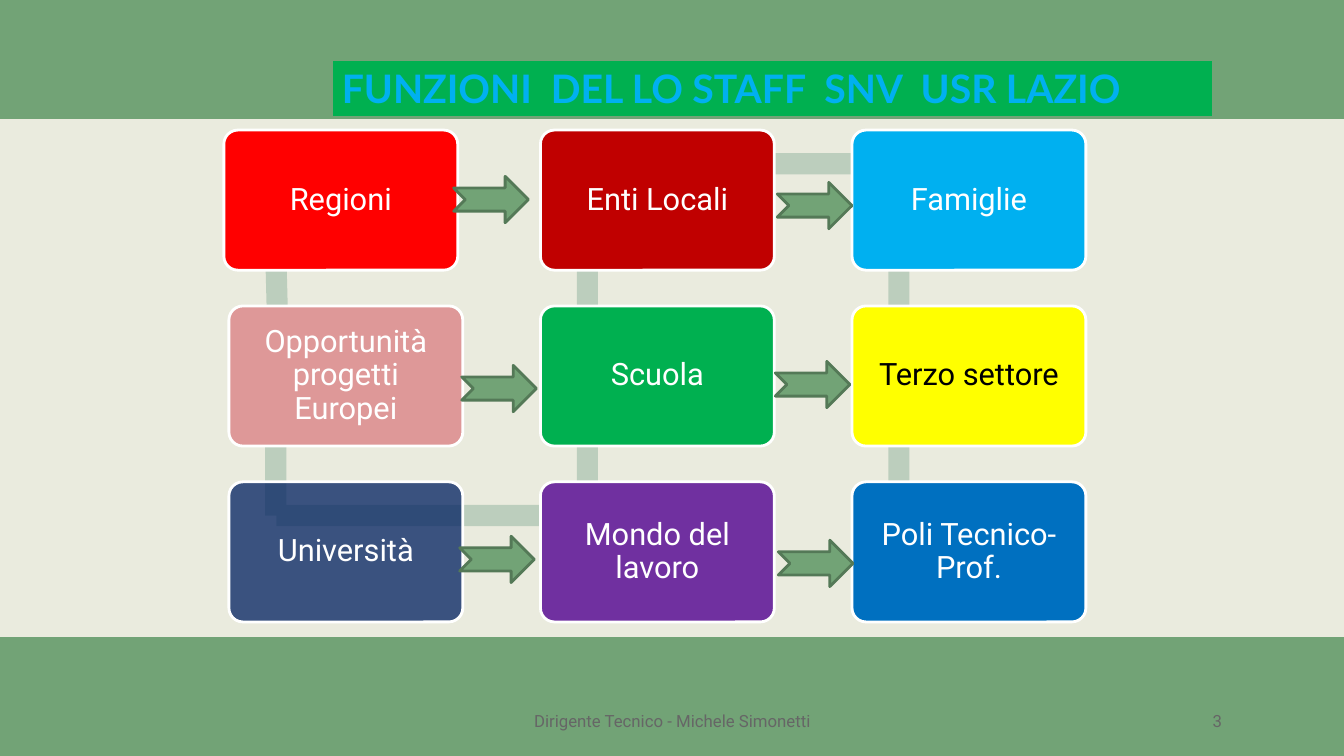
import pptx
import pptx.util
import pptx.dml.color
import pptx.enum.shapes
import pptx.enum.text
import pptx.oxml
import pptx.oxml.ns

Inches, Pt = pptx.util.Inches, pptx.util.Pt
SHAPE = pptx.enum.shapes.MSO_SHAPE
ALIGN = pptx.enum.text.PP_ALIGN
ANCHOR = pptx.enum.text.MSO_ANCHOR

GREEN = "72A376"
CARD_W, CARD_H = 2.32, 1.39
PITCH_X, PITCH_Y = 3.09, 1.745
CARDS = [
    [("Regioni", "FF0000"), ("Enti Locali", "C00000"), ("Famiglie", "00B0F0")],
    [("Opportunità progetti Europei", "DE9898"), ("Scuola", "00B050"), ("Terzo settore", "FFFF00")],
    [("Università", "002060"), ("Mondo del lavoro", "7030A0"), ("Poli Tecnico-Prof.", "0070C0")],
]
ARROWS = [
    [(2.23, 0.46), (2.35, 0.52)],
    [(2.31, 0.59), (2.33, 0.55)],
    [(2.29, 0.54), (2.36, 0.58)],
]


def rgb(color):
    return pptx.dml.color.RGBColor.from_string(color)


def add_shape(s, kind, x, y, w, h, fill, line=None):
    sp = s.shapes.add_shape(kind, Inches(x), Inches(y), Inches(w), Inches(h))
    sp.shadow.inherit = False
    sp.fill.solid()
    sp.fill.fore_color.rgb = rgb(fill)
    if line:
        sp.line.color.rgb = rgb(line)
        sp.line.width = Pt(2)
    else:
        sp.line.fill.background()
    return sp


def set_text(sp, text, size, color, align, margins, font="Roboto", bold=False):
    tf = sp.text_frame
    tf.word_wrap = True
    tf.vertical_anchor = ANCHOR.MIDDLE
    tf.margin_left = tf.margin_right = Inches(margins[0])
    tf.margin_top = tf.margin_bottom = Inches(margins[1])
    p = tf.paragraphs[0]
    p.text = text
    p.alignment = align
    p.font.name = font
    p.font.size = Pt(size)
    p.font.bold = bold
    p.font.color.rgb = rgb(color)
    return p


def set_alpha(sp, percent):
    color = sp.fill._xPr.find(".//" + pptx.oxml.ns.qn("a:srgbClr"))
    color.append(pptx.oxml.parse_xml(
        f'<a:alpha {pptx.oxml.ns.nsdecls("a")} val="{percent * 1000}"/>'))


def add_title(s, x, y, w, h):
    sp = s.shapes.title
    sp.left, sp.top, sp.width, sp.height = (Inches(v) for v in (x, y, w, h))
    sp.fill.solid()
    sp.fill.fore_color.rgb = rgb("00B050")
    sp.line.color.rgb = rgb(GREEN)
    sp.line.width = Pt(2)
    set_text(sp, "FUNZIONI  DEL LO STAFF  SNV  USR LAZIO", 28, "00B0F0",
             ALIGN.LEFT, (0.1, 0.05), "Lato", True)
    sp.text_frame.auto_size = pptx.enum.text.MSO_AUTO_SIZE.NONE
    sp.element.getparent().append(sp.element)


def add_links(s, x, y):
    for row in range(2):
        for col in range(3):
            sp = add_shape(s, SHAPE.RECTANGLE, x - 0.4 + col * PITCH_X,
                           y + 1.11 + row * PITCH_Y, 1.73, 0.21, "BCCEBD")
            sp.rotation = 88.5 if row == col == 0 else 90
    for row, col in ((2, 0), (0, 1)):
        add_shape(s, SHAPE.RECTANGLE, x + 0.47 + col * PITCH_X,
                  y + 0.23 + row * PITCH_Y, 3.08, 0.21, "BCCEBD")


def add_cards(s, x, y):
    for row, cards in enumerate(CARDS):
        for col, (text, fill) in enumerate(cards):
            nudge = -0.05 if row == col == 0 else 0
            sp = add_shape(s, SHAPE.ROUNDED_RECTANGLE, x + nudge + col * PITCH_X,
                           y + row * PITCH_Y, CARD_W, CARD_H, fill, "FFFFFF")
            sp.adjustments[0] = 0.1
            color = "000000" if fill == "FFFF00" else "FFFFFF"
            p = set_text(sp, text, 22, color, ALIGN.CENTER, (0.13, 0.13))
            p.line_spacing = 0.9
            if text == "Università":
                set_alpha(sp, 75)


def add_arrows(s, x, y):
    for row, offsets in enumerate(ARROWS):
        for col, (dx, dy) in enumerate(offsets):
            add_shape(s, SHAPE.NOTCHED_RIGHT_ARROW, x + dx + col * PITCH_X,
                      y + dy + row * PITCH_Y, 0.74, 0.46, GREEN, "547957")


def add_footer(s, x, y, h):
    for text, dx, w, align in (
        ("Dirigente Tecnico - Michele Simonetti", 0, 6.92, ALIGN.CENTER),
        ("3", 6.91, 2, ALIGN.RIGHT),
    ):
        sp = s.shapes.add_textbox(Inches(x + dx), Inches(y), Inches(w), Inches(h))
        set_text(sp, text, 12, "666666", align, (0, 0.05))


def main():
    prs = pptx.Presentation()
    prs.slide_width, prs.slide_height = Inches(13.33), Inches(7.5)
    s = prs.slides.add_slide(prs.slide_layouts[5])
    s.background.fill.solid()
    s.background.fill.fore_color.rgb = rgb("EAEBDE")
    for y in (6.32, 0):
        add_shape(s, SHAPE.RECTANGLE, 0, y, 13.33, 1.18, GREEN)
    add_links(s, 2.27, 1.29)
    add_cards(s, 2.27, 1.29)
    add_title(s, 3.29, 0.59, 8.74, 0.57)
    add_arrows(s, 2.27, 1.29)
    add_footer(s, 3.21, 6.95, 0.4)
    prs.save("out.pptx")


if __name__ == "__main__":
    main()
